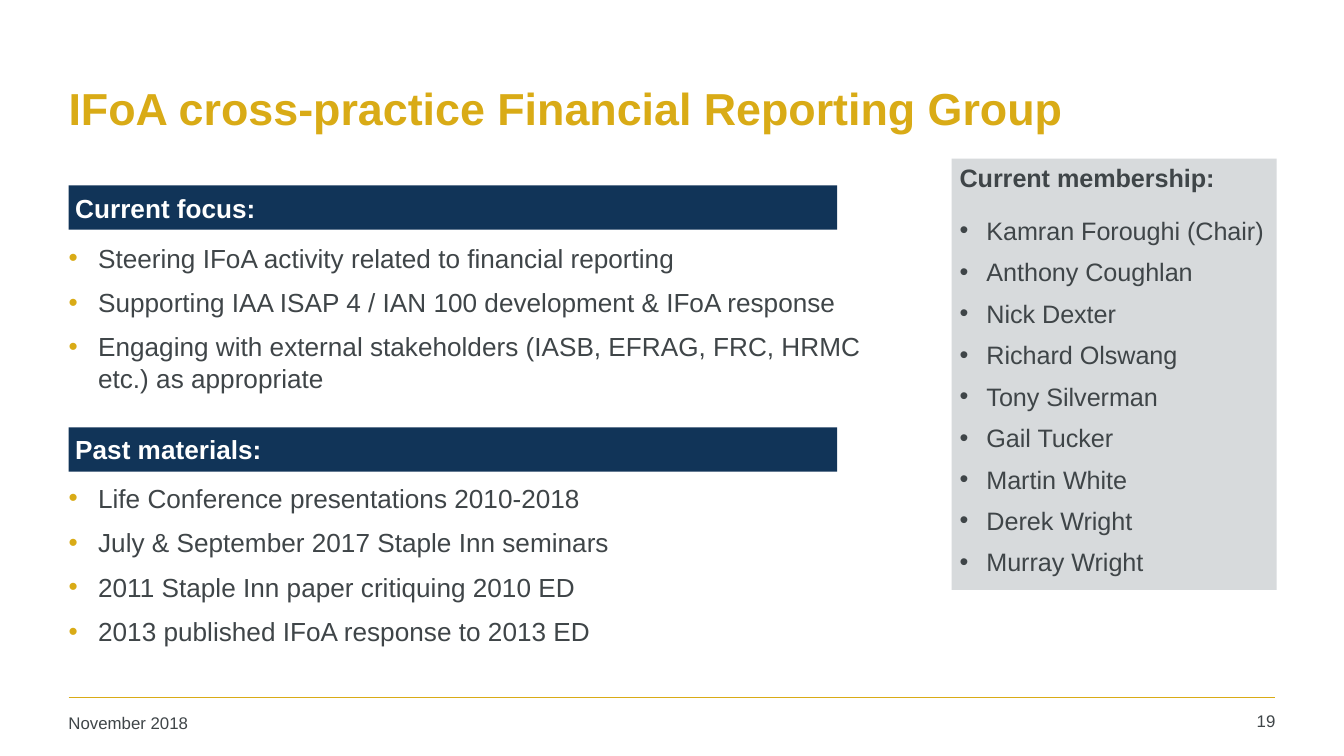
import pptx
import pptx.dml.color
import pptx.enum.shapes
import pptx.enum.text
import pptx.oxml
import pptx.oxml.ns
import pptx.util
from lxml import etree

Inches = pptx.util.Inches
Pt = pptx.util.Pt
ANCHOR = pptx.enum.text.MSO_ANCHOR
ALIGN = pptx.enum.text.PP_ALIGN

COLOURS = {
    "gold": "D9AB16",
    "navy": "113458",
    "grey": "D7DADC",
    "text": "3F4548",
    "white": "FFFFFF",
}
FONT = "Arial"
MARGIN = 0.51
TEXT_INSETS = (0.08, 0.04)

FOCUS = [
    "Steering IFoA activity related to financial reporting",
    "Supporting IAA ISAP 4 / IAN 100 development & IFoA response",
    "Engaging with external stakeholders (IASB, EFRAG, FRC, HRMC etc.) as appropriate",
]
MATERIALS = [
    "Life Conference presentations 2010-2018",
    "July & September 2017 Staple Inn seminars",
    "2011 Staple Inn paper critiquing 2010 ED",
    "2013 published IFoA response to 2013 ED",
]
MEMBERS = [
    "Kamran Foroughi (Chair)",
    "Anthony Coughlan",
    "Nick Dexter",
    "Richard Olswang",
    "Tony Silverman",
    "Gail Tucker",
    "Martin White",
    "Derek Wright",
    "Murray Wright",
]


def rgb(name):
    return pptx.dml.color.RGBColor.from_string(COLOURS[name])


def place(shape, left, top, width, height):
    shape.left, shape.top = Inches(left), Inches(top)
    shape.width, shape.height = Inches(width), Inches(height)


def prepare_frame(shape, insets, anchor=ANCHOR.TOP):
    """Set wrapping, anchor and (horizontal, vertical) insets."""
    frame = shape.text_frame
    frame.word_wrap = True
    frame.auto_size = pptx.enum.text.MSO_AUTO_SIZE.NONE
    frame.vertical_anchor = anchor
    frame.margin_left = frame.margin_right = Inches(insets[0])
    frame.margin_top = frame.margin_bottom = Inches(insets[1])
    return frame


def write(paragraph, text, size, colour, bold=False, align=ALIGN.LEFT):
    paragraph.alignment = align
    run = paragraph.add_run()
    run.text = text
    run.font.name = FONT
    run.font.size = Pt(size)
    run.font.bold = bold
    run.font.color.rgb = rgb(colour)


def add_bullet(paragraph, colour, indent):
    properties = paragraph._p.get_or_add_pPr()
    properties.set("marL", str(Inches(indent)))
    properties.set("indent", str(-Inches(indent)))
    qn = pptx.oxml.ns.qn
    bullet_colour = etree.SubElement(properties, qn("a:buClr"))
    etree.SubElement(bullet_colour, qn("a:srgbClr"), val=COLOURS[colour])
    etree.SubElement(properties, qn("a:buFont"), typeface=FONT)
    etree.SubElement(properties, qn("a:buChar"), char="•")


def add_panel(slide, box, colour):
    shape = slide.shapes.add_shape(
        pptx.enum.shapes.MSO_SHAPE.RECTANGLE, *map(Inches, box))
    shape.shadow.inherit = False
    shape.fill.solid()
    shape.fill.fore_color.rgb = rgb(colour)
    shape.line.fill.background()
    return shape


def add_heading_bar(slide, top, text):
    bar = add_panel(slide, (MARGIN, top, 5.72, 0.33), "navy")
    frame = prepare_frame(bar, (0.05, 0.05), ANCHOR.MIDDLE)
    write(frame.paragraphs[0], text, 14, "white", bold=True)


def fill_title(slide, text):
    title = slide.shapes.title
    place(title, 0.43, 0.33, 9.07, 0.94)
    frame = prepare_frame(title, TEXT_INSETS, ANCHOR.MIDDLE)
    write(frame.paragraphs[0], text, 24, "gold", bold=True)


def fill_body(slide):
    body = slide.placeholders[1]
    place(body, 0.43, 1.76, 6.11, 3.33)
    frame = prepare_frame(body, TEXT_INSETS)
    for index, text in enumerate(FOCUS + MATERIALS):
        paragraph = frame.add_paragraph() if index else frame.paragraphs[0]
        add_bullet(paragraph, "gold", 0.22)
        if index == 0:
            space = 0
        elif index == len(FOCUS):
            space = 47.5  # clears the second heading bar
        else:
            space = 7
        paragraph.space_before = Pt(space)
        write(paragraph, text, 14, "text")


def add_membership(slide):
    panel = add_panel(slide, (7.08, 1.18, 2.42, 3.21), "grey")
    frame = prepare_frame(panel, (0.06, 0.03))
    heading = frame.paragraphs[0]
    heading.space_after = Pt(6)
    write(heading, "Current membership:", 13.5, "text", bold=True)
    for member in MEMBERS:
        paragraph = frame.add_paragraph()
        add_bullet(paragraph, "text", 0.2)
        paragraph.space_before = Pt(6)
        write(paragraph, member, 13.5, "text")


def add_footer_text(slide, box, text, align):
    shape = slide.shapes.add_textbox(*map(Inches, box))
    frame = prepare_frame(shape, TEXT_INSETS)
    write(frame.paragraphs[0], text, 9, "text", align=align)


def add_footer_rule(slide):
    rule = slide.shapes.add_connector(
        pptx.enum.shapes.MSO_CONNECTOR.STRAIGHT,
        Inches(MARGIN), Inches(5.19), Inches(10 - MARGIN), Inches(5.19))
    rule.line.color.rgb = rgb("gold")
    rule.line.width = Pt(1)
    etree.SubElement(rule._element.spPr, pptx.oxml.ns.qn("a:effectLst"))


def main():
    presentation = pptx.Presentation()
    presentation.slide_width = Inches(10)
    presentation.slide_height = Inches(10 * 9 / 16)
    slide = presentation.slides.add_slide(presentation.slide_layouts[1])

    fill_title(slide, "IFoA cross-practice Financial Reporting Group")
    fill_body(slide)
    add_heading_bar(slide, 1.38, "Current focus:")
    add_heading_bar(slide, 3.18, "Past materials:")
    add_membership(slide)
    add_footer_rule(slide)
    add_footer_text(slide, (0.43, 5.26, 2.2, 0.27), "November 2018", ALIGN.LEFT)
    add_footer_text(slide, (8.86, 5.25, 0.71, 0.28), "19", ALIGN.RIGHT)

    presentation.save("out.pptx")


if __name__ == "__main__":
    main()
